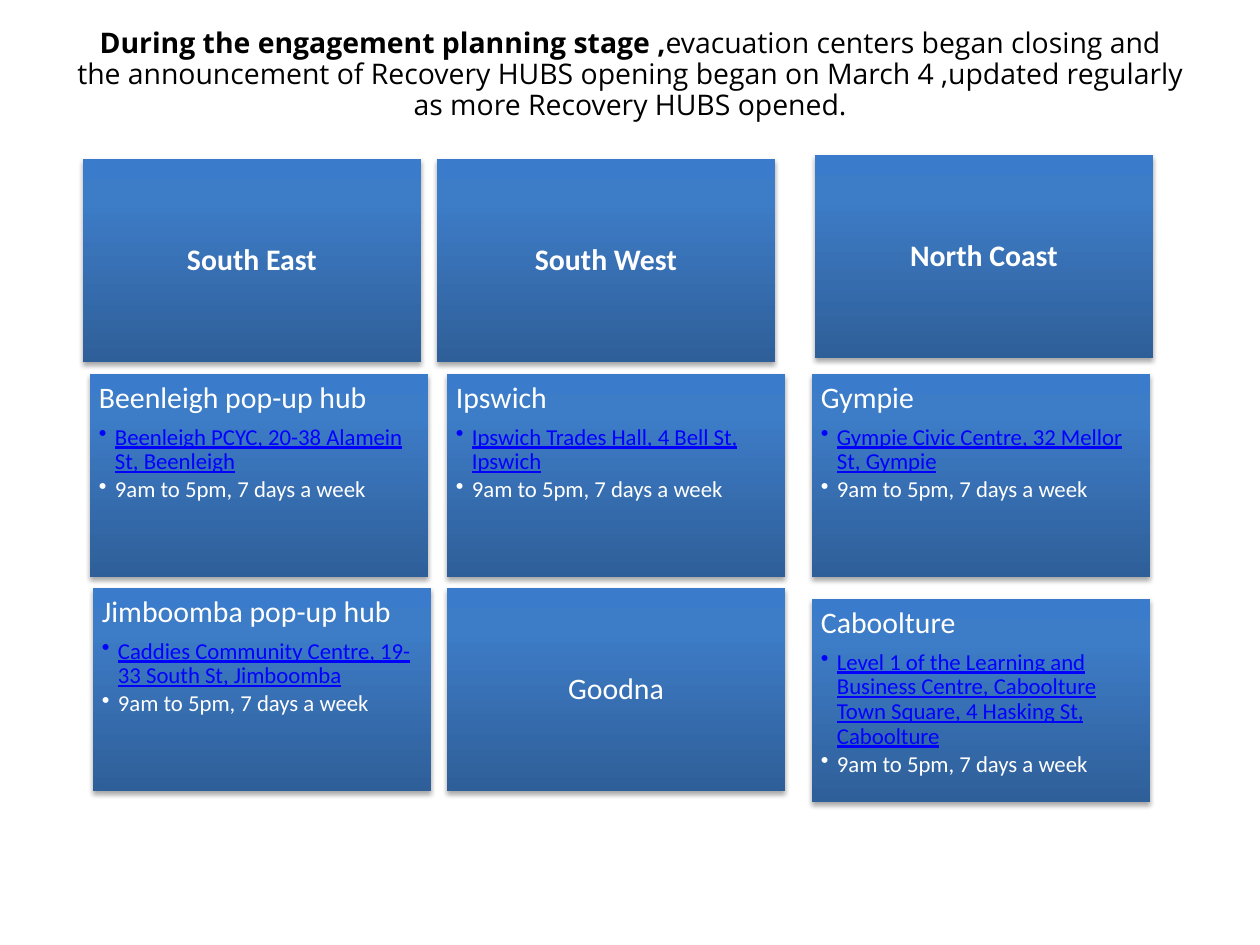
from dataclasses import dataclass

from lxml import etree
from pptx import Presentation
from pptx import util as u
from pptx.dml.color import RGBColor
from pptx.enum import shapes, text
from pptx.oxml import parse_xml
from pptx.oxml.ns import nsdecls, qn

PX = 914400 / 126  # EMU in one px


def px(n):
    return u.Emu(round(n * PX))


@dataclass(frozen=True)
class Theme:
    dark: str = "000000"
    light: str = "FFFFFF"
    link: str = "0000FF"
    stops: tuple = ((0, "2F5F99"), (80, "3D7CC7"), (100, "3A7CCB"))
    head: str = "Open Sans"
    body: str = "Calibri"
    title: float = 16.2
    large: float = 17
    small: float = 13


def write(para, words, font, size, color, bold=False, line=False):
    run = para.add_run()
    run.text = words
    f = run.font
    f.name, f.size, f.bold, f.underline = font, u.Pt(size), bold, line
    f.color.rgb = RGBColor.from_string(color)


def bullet(para, indent=16):
    props = para._p.get_or_add_pPr()
    props.set("marL", str(px(indent)))
    props.set("indent", str(-px(indent)))
    etree.SubElement(props, qn("a:buChar")).set("char", "•")


class Deck:
    def __init__(self, theme):
        self.theme = theme
        self.prs = Presentation()
        self.prs.slide_width, self.prs.slide_height = px(1260), px(945)
        self.slide = self.prs.slides.add_slide(self.prs.slide_layouts[5])

    def title(self, x, y, w, h, lead, rest):
        t = self.theme
        box = self.slide.shapes.title
        box.left, box.top, box.width, box.height = map(px, (x, y, w, h))
        frame = box.text_frame
        frame.auto_size = text.MSO_AUTO_SIZE.NONE
        frame.vertical_anchor = text.MSO_ANCHOR.TOP
        para = frame.paragraphs[0]
        para.alignment = text.PP_ALIGN.CENTER
        para.line_spacing = 0.9
        write(para, lead, t.head, t.title, t.dark, bold=True)
        write(para, rest, t.head, t.title, t.dark)

    def panel(self, x, y, w, h):
        """Add a gradient rectangle with a soft shadow and return its text frame."""
        box = self.slide.shapes.add_shape(
            shapes.MSO_SHAPE.RECTANGLE, *map(px, (x, y, w, h)))
        box.line.fill.background()
        stops = "".join(
            f'<a:gs pos="{pos * 1000}"><a:srgbClr val="{color}"/></a:gs>'
            for pos, color in self.theme.stops)
        props = box._element.spPr
        props.find(qn("a:ln")).addprevious(parse_xml(
            f'<a:gradFill rotWithShape="1" {nsdecls("a")}><a:gsLst>{stops}</a:gsLst>'
            '<a:lin ang="16200000" scaled="0"/></a:gradFill>'))
        props.append(parse_xml(
            f'<a:effectLst {nsdecls("a")}>'
            f'<a:outerShdw blurRad="{u.Pt(3.1)}" dist="{u.Pt(1.8)}" dir="5400000"'
            ' rotWithShape="0"><a:srgbClr val="000000"><a:alpha val="35000"/>'
            '</a:srgbClr></a:outerShdw></a:effectLst>'))
        frame = box.text_frame
        frame.word_wrap = True
        frame.margin_left = frame.margin_right = px(9)
        frame.margin_top = frame.margin_bottom = px(9)
        return frame

    def card(self, x, y, w, h, name, place=None, hours=None, bold=False):
        """Add a card: a centred name, or a name above a bulleted place and hours."""
        t = self.theme
        frame = self.panel(x, y, w, h)
        anchor, align = text.MSO_ANCHOR.MIDDLE, text.PP_ALIGN.CENTER
        if place:
            anchor, align = text.MSO_ANCHOR.TOP, text.PP_ALIGN.LEFT
        frame.vertical_anchor = anchor
        para = frame.paragraphs[0]
        para.alignment, para.line_spacing, para.space_after = align, 0.9, u.Pt(6)
        write(para, name, t.body, t.large, t.light, bold=bold)
        if not place:
            return
        for words, color, line in ((place, t.link, True), (hours, t.light, False)):
            para = frame.add_paragraph()
            para.alignment, para.line_spacing, para.space_after = align, 0.9, u.Pt(2)
            bullet(para)
            write(para, words, t.body, t.small, color, line=line)


WIDE, HIGH = 338, 203
HOURS = "9am to 5pm, 7 days a week"
REGIONS = (
    (83, 159, "South East"),
    (437, 159, "South West"),
    (815, 155, "North Coast"),
)
HUBS = (
    (90, 374, "Beenleigh pop-up hub", "Beenleigh PCYC, 20-38 Alamein St, Beenleigh"),
    (93, 588, "Jimboomba pop-up hub",
     "Caddies Community Centre, 19-33 South St, Jimboomba"),
    (447, 374, "Ipswich", "Ipswich Trades Hall, 4 Bell St, Ipswich"),
    (447, 588, "Goodna", None),
    (812, 374, "Gympie", "Gympie Civic Centre, 32 Mellor St, Gympie"),
    (812, 599, "Caboolture",
     "Level 1 of the Learning and Business Centre, Caboolture Town Square, "
     "4 Hasking St, Caboolture"),
)


def main():
    deck = Deck(Theme())
    deck.title(63, 23, 1134, 156, "During the engagement planning stage ,",
               "evacuation centers began closing and the announcement of Recovery "
               "HUBS opening began on March 4 ,updated regularly as more Recovery "
               "HUBS opened.")
    for x, y, name in REGIONS:
        deck.card(x, y, WIDE, HIGH, name, bold=True)
    for x, y, name, place in HUBS:
        deck.card(x, y, WIDE, HIGH, name, place, HOURS)
    deck.prs.save("out.pptx")


if __name__ == "__main__":
    main()
